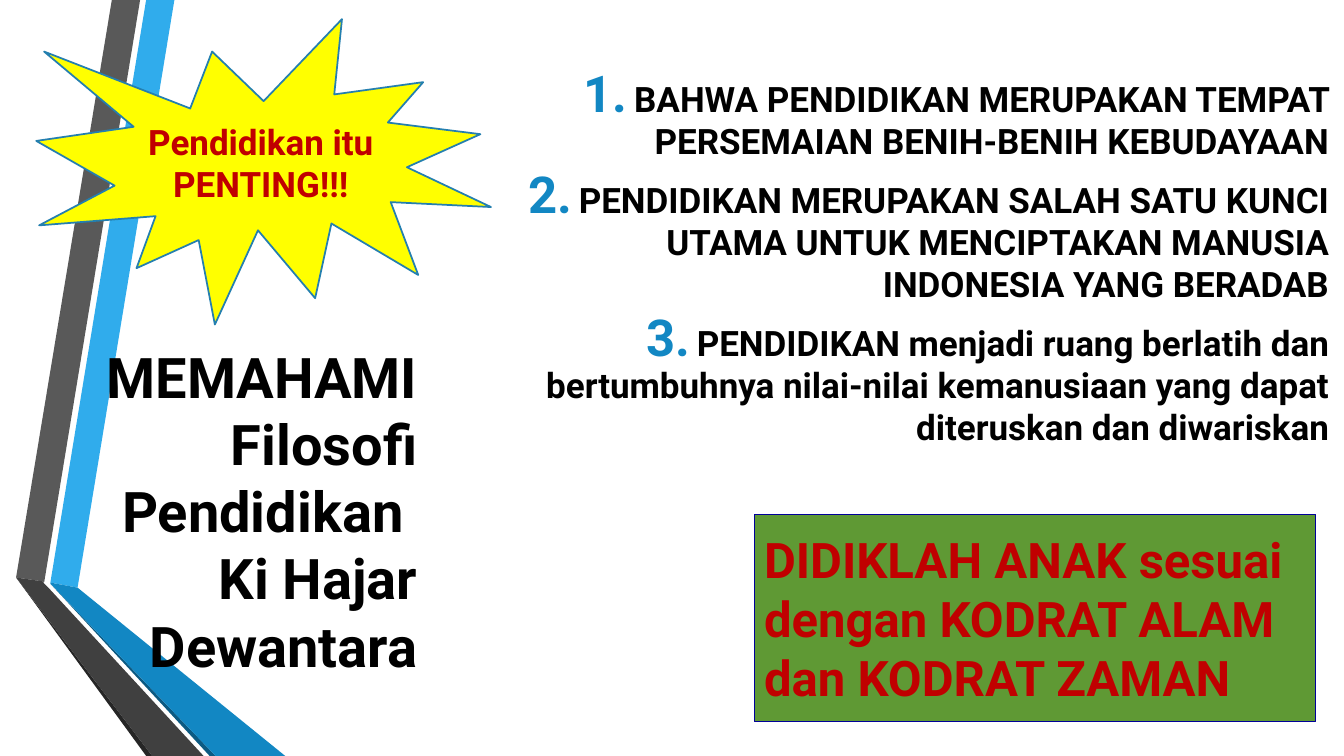
import dataclasses

import pptx
import pptx.dml.color
import pptx.enum.shapes
import pptx.enum.text
import pptx.oxml
import pptx.oxml.ns
import pptx.util

Inches = pptx.util.Inches
Pt = pptx.util.Pt
Align = pptx.enum.text.PP_ALIGN
Anchor = pptx.enum.text.MSO_ANCHOR
Shapes = pptx.enum.shapes.MSO_SHAPE


@dataclasses.dataclass(frozen=True)
class Theme:
    font: str = "Roboto"
    title_size: int = 40
    banner_size: int = 35
    body_size: int = 25
    text: str = "000000"
    accent: str = "C00000"
    number: str = "1287C3"
    burst: str = "FFFF00"
    burst_line: str = "247FAF"
    banner: str = "5F9934"
    banner_line: str = "000099"


@dataclasses.dataclass(frozen=True)
class Box:
    left: float
    top: float
    width: float
    height: float

    def lengths(self):
        return [Inches(value) for value in dataclasses.astuple(self)]


THEME = Theme()

RIBBONS = [
    ("30ACEC", [(0.5, 5.78), (0.77, 5.83), (1.73, 0), (1.45, 0)]),
    ("595959", [(1.39, 0), (1.11, 0), (0.16, 5.73), (0.44, 5.77)]),
    ("262626", [(0.16, 5.73), (1.45, 7.5), (1.51, 7.5)]),
    ("0C5A82", [(0.5, 5.79), (2.08, 7.5), (2.14, 7.5)]),
    ("1287C3", [(0.5, 5.79), (2.14, 7.5), (2.83, 7.5), (0.77, 5.83), (0.5, 5.78)]),
    ("404040", [(2.02, 7.5), (0.48, 5.83), (0.43, 5.78), (0.44, 5.77),
                (0.16, 5.73), (1.51, 7.5)]),
]

REASONS = [
    "BAHWA PENDIDIKAN MERUPAKAN TEMPAT PERSEMAIAN BENIH-BENIH KEBUDAYAAN",
    "PENDIDIKAN MERUPAKAN SALAH SATU KUNCI UTAMA UNTUK MENCIPTAKAN MANUSIA "
    "INDONESIA YANG BERADAB",
    "PENDIDIKAN menjadi ruang berlatih dan bertumbuhnya nilai-nilai kemanusiaan "
    "yang dapat diteruskan dan diwariskan",
]


def color(value):
    return pptx.dml.color.RGBColor.from_string(value)


def style(para, size, ink, align):
    para.alignment = align
    para.font.name = THEME.font
    para.font.size = Pt(size)
    para.font.bold = True
    para.font.color.rgb = color(ink)


def paint(shape, fill, line=None, width=0):
    shape.shadow.inherit = False
    shape.fill.solid()
    shape.fill.fore_color.rgb = color(fill)
    if line:
        shape.line.color.rgb = color(line)
        shape.line.width = Pt(width)
    else:
        shape.line.fill.background()


def add_ribbons(page, box):
    for fill, corners in RIBBONS:
        points = [(Inches(box.left + x), Inches(box.top + y)) for x, y in corners]
        builder = page.shapes.build_freeform(*points[0])
        builder.add_line_segments(points[1:], close=True)
        paint(builder.convert_to_shape(), fill)


def place_title(page, box, text):
    title = page.shapes.title
    title.left, title.top, title.width, title.height = box.lengths()
    frame = title.text_frame
    frame.text = text
    frame.word_wrap = True
    frame.auto_size = pptx.enum.text.MSO_AUTO_SIZE.NONE
    frame.vertical_anchor = Anchor.BOTTOM
    style(frame.paragraphs[0], THEME.title_size, THEME.text, Align.RIGHT)
    page.shapes._spTree.append(title._element)


def number(para):
    properties = para._p.get_or_add_pPr()
    properties.set("marL", str(Inches(0.5)))
    properties.set("indent", str(Inches(-0.5)))
    namespace = pptx.oxml.ns.nsdecls("a")
    bullets = [
        f'<a:buClr {namespace}><a:srgbClr val="{THEME.number}"/></a:buClr>',
        f'<a:buSzPct {namespace} val="145000"/>',
        f'<a:buFont {namespace} typeface="{THEME.font}"/>',
        f'<a:buAutoNum {namespace} type="arabicPeriod"/>',
    ]
    defaults = properties.find(pptx.oxml.ns.qn("a:defRPr"))
    for bullet in bullets:
        defaults.addprevious(pptx.oxml.parse_xml(bullet))


def add_reasons(page, box, reasons):
    frame = page.shapes.add_textbox(*box.lengths()).text_frame
    frame.word_wrap = True
    frame.text = "\n".join(reasons)
    for para in frame.paragraphs:
        style(para, THEME.body_size, THEME.text, Align.RIGHT)
        para.space_after = Pt(12)
        number(para)


def add_callout(page, box, kind, text, size, align, fill, line, width):
    shape = page.shapes.add_shape(kind, *box.lengths())
    paint(shape, fill, line, width)
    frame = shape.text_frame
    frame.word_wrap = True
    frame.vertical_anchor = Anchor.MIDDLE
    frame.text = text
    style(frame.paragraphs[0], size, THEME.accent, align)


def build_slide(deck):
    page = deck.slides.add_slide(deck.slide_layouts[5])
    add_ribbons(page, Box(0, 0, 2.83, 7.5))
    place_title(page, Box(0.76, 2.34, 3.48, 4.44),
                "MEMAHAMI\vFilosofi Pendidikan \vKi Hajar Dewantara")
    add_reasons(page, Box(4.65, 0.72, 8.63, 4.59), REASONS)
    add_callout(page, Box(0.36, 0.19, 4.51, 3.03), Shapes.EXPLOSION1,
                "Pendidikan itu PENTING!!!", THEME.body_size, Align.CENTER,
                THEME.burst, THEME.burst_line, 1.25)
    add_callout(page, Box(7.48, 5.1, 5.57, 2.06), Shapes.RECTANGLE,
                "DIDIKLAH ANAK sesuai dengan KODRAT ALAM dan KODRAT ZAMAN",
                THEME.banner_size, Align.LEFT,
                THEME.banner, THEME.banner_line, 0.75)


def main():
    deck = pptx.Presentation()
    deck.slide_width = Inches(13.33)
    deck.slide_height = Inches(7.5)
    build_slide(deck)
    deck.save("out.pptx")


if __name__ == "__main__":
    main()
